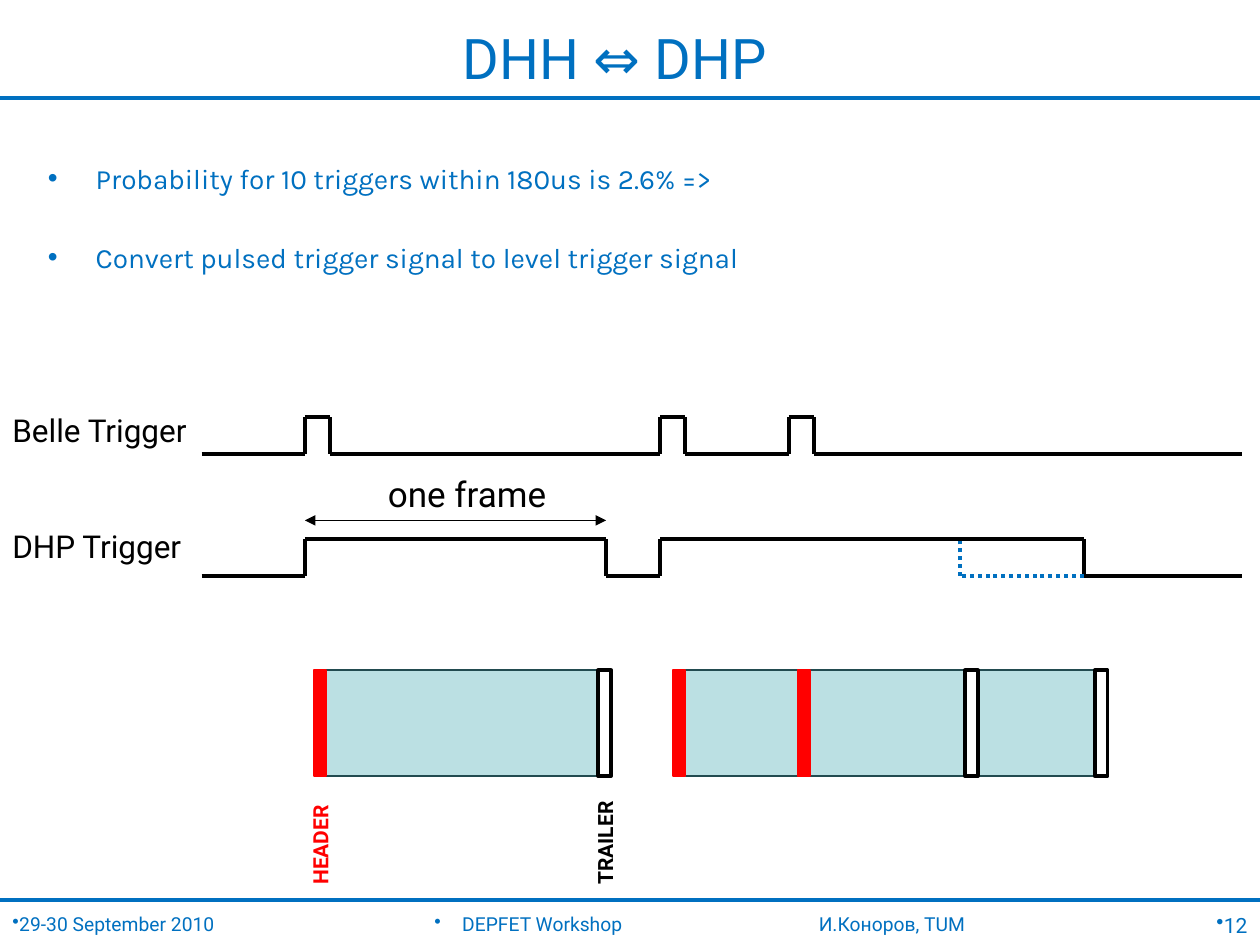
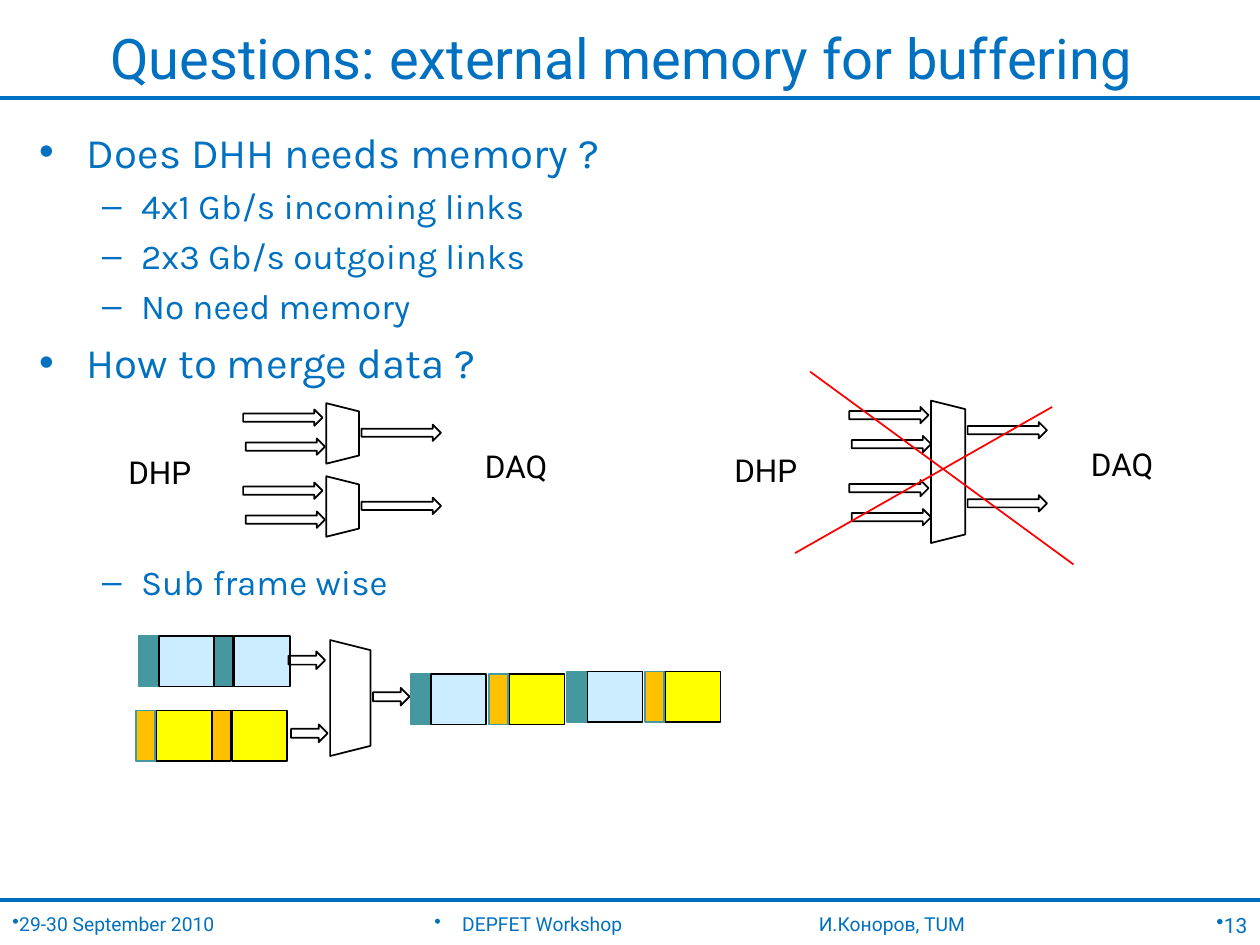
from itertools import pairwise

from lxml import etree
from pptx import Presentation
from pptx.dml.color import RGBColor
from pptx.enum import dml, shapes, text
from pptx.oxml import ns
from pptx.util import Inches, Pt

# Shared look
BLUE = RGBColor(0x00, 0x70, 0xC0)
BLACK = RGBColor(0x00, 0x00, 0x00)
WHITE = RGBColor(0xFF, 0xFF, 0xFF)
RED = RGBColor(0xFF, 0x00, 0x00)
FRAME_FILL = RGBColor(0xBB, 0xE0, 0xE3)
FRAME_EDGE = RGBColor(0x22, 0x4B, 0x50)
TEAL = RGBColor(0x45, 0x97, 0xA0)
PALE_BLUE = RGBColor(0xCC, 0xEC, 0xFF)
YELLOW = RGBColor(0xFF, 0xFF, 0x00)
ORANGE = RGBColor(0xFF, 0xC0, 0x00)
HEADING_FONT, BODY_FONT = "Roboto", "Karla"
SHAPE = shapes.MSO_SHAPE
ALIGN = text.PP_ALIGN


def place(shape, left, top, width, height):
    shape.left, shape.top = Inches(left), Inches(top)
    shape.width, shape.height = Inches(width), Inches(height)


def add_run(paragraph, words, size, color, font=HEADING_FONT, bold=False):
    run = paragraph.add_run()
    run.text = words
    run.font.name, run.font.size, run.font.bold = font, Pt(size), bold
    run.font.color.rgb = color


def set_bullet(paragraph, character, margin=0.0, hanging=0.0):
    properties = paragraph._p.get_or_add_pPr()
    properties.set("marL", str(Inches(margin)))
    properties.set("indent", str(-Inches(hanging)))
    bullet = etree.SubElement(properties, ns.qn("a:buChar"))
    bullet.set("char", character)


def add_label(slide, box, words, size, color=BLACK, bold=False, rotation=0,
              wrap=False, align=ALIGN.LEFT, bullet_hanging=None):
    label = slide.shapes.add_textbox(*map(Inches, box))
    label.rotation = rotation
    label.text_frame.word_wrap = wrap
    paragraph = label.text_frame.paragraphs[0]
    if bullet_hanging is not None:
        set_bullet(paragraph, "•", bullet_hanging, bullet_hanging)
    paragraph.alignment = align
    add_run(paragraph, words, size, color, bold=bold)


def add_line(slide, start, end, color=BLACK, width=2.25, dotted=False, arrows=False):
    connector = slide.shapes.add_connector(
        shapes.MSO_CONNECTOR.STRAIGHT, *map(Inches, (*start, *end)))
    connector.line.color.rgb = color
    connector.line.width = Pt(width)
    if dotted:
        connector.line.dash_style = dml.MSO_LINE.ROUND_DOT
    if arrows:
        line = connector.line._get_or_add_ln()
        for tag in ("a:headEnd", "a:tailEnd"):
            etree.SubElement(line, ns.qn(tag)).set("type", "triangle")
    etree.SubElement(connector._element.spPr, ns.qn("a:effectLst"))


def add_block(slide, kind, box, fill=None, edge=BLACK, width=1, rotation=0):
    block = slide.shapes.add_shape(kind, *map(Inches, box))
    block.shadow.inherit = False
    block.rotation = rotation
    if fill is None:
        block.fill.background()
    else:
        block.fill.solid()
        block.fill.fore_color.rgb = fill
    block.line.color.rgb = edge
    block.line.width = Pt(width)


def add_base_slide(presentation, title, number):
    """Title, rules and footer shared by all slides."""
    slide = presentation.slides.add_slide(presentation.slide_layouts[1])
    for y in (7.14, 0.78):
        add_line(slide, (0, y), (10, y), BLUE)
    heading = slide.shapes.title
    place(heading, 0.38, 0.15, 9.11, 0.61)
    frame = heading.text_frame
    frame.auto_size = text.MSO_AUTO_SIZE.NONE
    frame.vertical_anchor = text.MSO_ANCHOR.MIDDLE
    frame.paragraphs[0].alignment = ALIGN.CENTER
    add_run(frame.paragraphs[0], title, 32, BLUE)

    footer = [
        (0, 1.85, "29-30 September 2010", 11, ALIGN.LEFT, 0),
        (3.35, 2.5, "DEPFET Workshop", 11, ALIGN.LEFT, 0.22),
        (6.4, 2.5, "И.Коноров, TUM", 11, ALIGN.LEFT, None),
        (9.36, 0.64, str(number), 12, ALIGN.RIGHT, 0),
    ]
    for left, width, words, size, align, hanging in footer:
        add_label(slide, (left, 7.19, width, 0.31), words, size, BLUE,
                  wrap=True, align=align, bullet_hanging=hanging)
    return slide


def fill_body(slide, box, items):
    """Each item is (level, words, size, space before in points)."""
    body = slide.placeholders[1]
    place(body, *box)
    frame = body.text_frame
    frame.auto_size = text.MSO_AUTO_SIZE.NONE
    for index, (level, words, size, space) in enumerate(items):
        paragraph = frame.add_paragraph() if index else frame.paragraphs[0]
        paragraph.level = level
        set_bullet(paragraph, "•–"[level], (0.38, 0.81)[level], (0.38, 0.31)[level])
        paragraph.space_before = Pt(space)
        add_run(paragraph, words, size, BLUE, BODY_FONT)


# Timing slide
def add_waveform(slide, left, base, width, edges):
    """Draw a signal that changes level at every edge, starting low."""
    high = base - 0.29
    points = [(left, base)]
    for index, x in enumerate(edges):
        levels = (high, base) if index % 2 else (base, high)
        points += [(left + x, y) for y in levels]
    points.append((left + width, base))
    for start, end in pairwise(points):
        add_line(slide, start, end)


def add_timing(slide, left, top):
    pulse_starts = (0.82, 3.64, 4.66)
    belle_edges = [x + offset for x in pulse_starts for offset in (0, 0.2)]
    add_waveform(slide, left, top + 0.39, 8.26, belle_edges)
    base = top + 1.36
    add_waveform(slide, left, base, 8.26, (0.82, 3.21, 3.64, 7))
    # Where the second frame would have ended
    corner = (left + 6.02, base)
    add_line(slide, corner, (left + 6.02, base - 0.29), BLUE, dotted=True)
    add_line(slide, (left + 7, base), corner, BLUE, dotted=True)
    add_line(slide, (left + 0.82, top + 0.92), (left + 3.21, top + 0.92),
             width=1, arrows=True)
    add_label(slide, (left - 1.6, top, 1.63, 0.4), "Belle Trigger", 18)
    add_label(slide, (left - 1.6, top + 0.92, 1.6, 0.4), "DHP Trigger", 18)
    add_label(slide, (left + 1.38, top + 0.49, 1.46, 0.44), "one frame", 20)


def add_frames(slide, left, top):
    height = 0.84
    for x, width in ((0.1, 2.17), (2.95, 3.25)):
        add_block(slide, SHAPE.RECTANGLE, (left + x, top, width, height),
                  FRAME_FILL, FRAME_EDGE)
    for x in (0, 2.85, 3.84):
        add_block(slide, SHAPE.RECTANGLE, (left + x, top, 0.1, height), RED, RED)
    for x in (2.26, 5.17, 6.2):
        add_block(slide, SHAPE.RECTANGLE, (left + x, top, 0.1, height),
                  WHITE, width=2.25)
    for x, words, color in ((-0.4, "HEADER", RED), (1.86, "TRAILER", BLACK)):
        add_label(slide, (left + x, top + 1.2, 0.9, 0.3), words, 12, color,
                  bold=True, rotation=270)


def build_trigger_slide(presentation):
    slide = add_base_slide(presentation, "DHH ⇔ DHP ", 12)
    fill_body(slide, (0.28, 1.23, 9.58, 2.4), [
        (0, "Probability for 10 triggers within 180us is 2.6% =>", 16, 0),
        (0, "Convert pulsed trigger signal to level trigger signal", 16, 26),
    ])
    add_timing(slide, 1.6, 3.21)
    add_frames(slide, 2.49, 5.32)


# Memory slide
def add_multiplexer(slide, left, top, length, depth):
    """Box is given as it stands before the quarter turn."""
    add_block(slide, SHAPE.TRAPEZOID, (left, top, length, depth), rotation=90)


def add_merge_scheme(slide, left, top):
    """Two pairs of input links, each with one output link."""
    for row in range(2):
        for x, y in ((0, 0), (0.02, 0.23), (0.94, 0.12)):
            add_block(slide, SHAPE.RIGHT_ARROW,
                      (left + x, top + y + 0.58 * row, 0.63, 0.13))
    add_label(slide, (left - 1.01, top + 0.3, 0.73, 0.4), "DHP", 18)
    add_label(slide, (left + 1.82, top + 0.25, 0.75, 0.4), "DAQ", 18)


def add_packet(slide, left, top, colors, header_edge=TEAL):
    header, payload = colors
    add_block(slide, SHAPE.RECTANGLE, (left + 0.16, top, 0.44, 0.4), payload)
    add_block(slide, SHAPE.RECTANGLE, (left, top, 0.15, 0.4), header, header_edge)


def add_subframe_merge(slide, left, top):
    blue_packet, yellow_packet = (TEAL, PALE_BLUE), (ORANGE, YELLOW)
    # Input streams
    for x, y, colors in ((0.02, 0, blue_packet), (0, 0.59, yellow_packet)):
        for index, edge in enumerate((TEAL, BLACK)):
            add_packet(slide, left + x + 0.6 * index, top + y, colors, edge)
    # Multiplexer and its links
    add_multiplexer(slide, left + 1.24, top + 0.33, 0.92, 0.32)
    for x, y in ((1.21, 0.12), (1.23, 0.7), (1.88, 0.41)):
        add_block(slide, SHAPE.RIGHT_ARROW, (left + x, top + y, 0.29, 0.14))
    # Interleaved output stream
    for index in range(4):
        colors = yellow_packet if index % 2 else blue_packet
        y = 0.3 if index < 2 else 0.28
        add_packet(slide, left + 2.18 + 0.62 * index, top + y, colors)


def build_memory_slide(presentation):
    slide = add_base_slide(presentation, "Questions: external memory for buffering", 13)
    fill_body(slide, (0.21, 0.95, 9.58, 6.03), [
        (0, "Does DHH needs memory ?", 24, 0),
        (1, "4x1 Gb/s incoming links", 20, 4.6),
        (1, "2x3 Gb/s outgoing links", 20, 4.6),
        (1, "No need memory", 20, 4.6),
        (0, "How to merge data ?", 24, 5.6),
        (1, "Sub frame wise", 20, 99.5),
    ])
    # Accepted scheme: one multiplexer per pair
    add_merge_scheme(slide, 1.93, 3.25)
    for top in (3.31, 3.89):
        add_multiplexer(slide, 2.48, top, 0.48, 0.26)
    # Rejected scheme: one multiplexer for all links
    add_merge_scheme(slide, 6.74, 3.23)
    add_multiplexer(slide, 6.96, 3.61, 1.13, 0.27)
    add_line(slide, (6.43, 2.95), (8.52, 4.48), RED, 1)
    add_line(slide, (6.31, 4.39), (8.35, 3.23), RED, 1)
    add_subframe_merge(slide, 1.08, 5.05)


def main():
    presentation = Presentation()
    presentation.slide_width, presentation.slide_height = Inches(10), Inches(7.5)
    build_trigger_slide(presentation)
    build_memory_slide(presentation)
    presentation.save("out.pptx")


if __name__ == "__main__":
    main()
